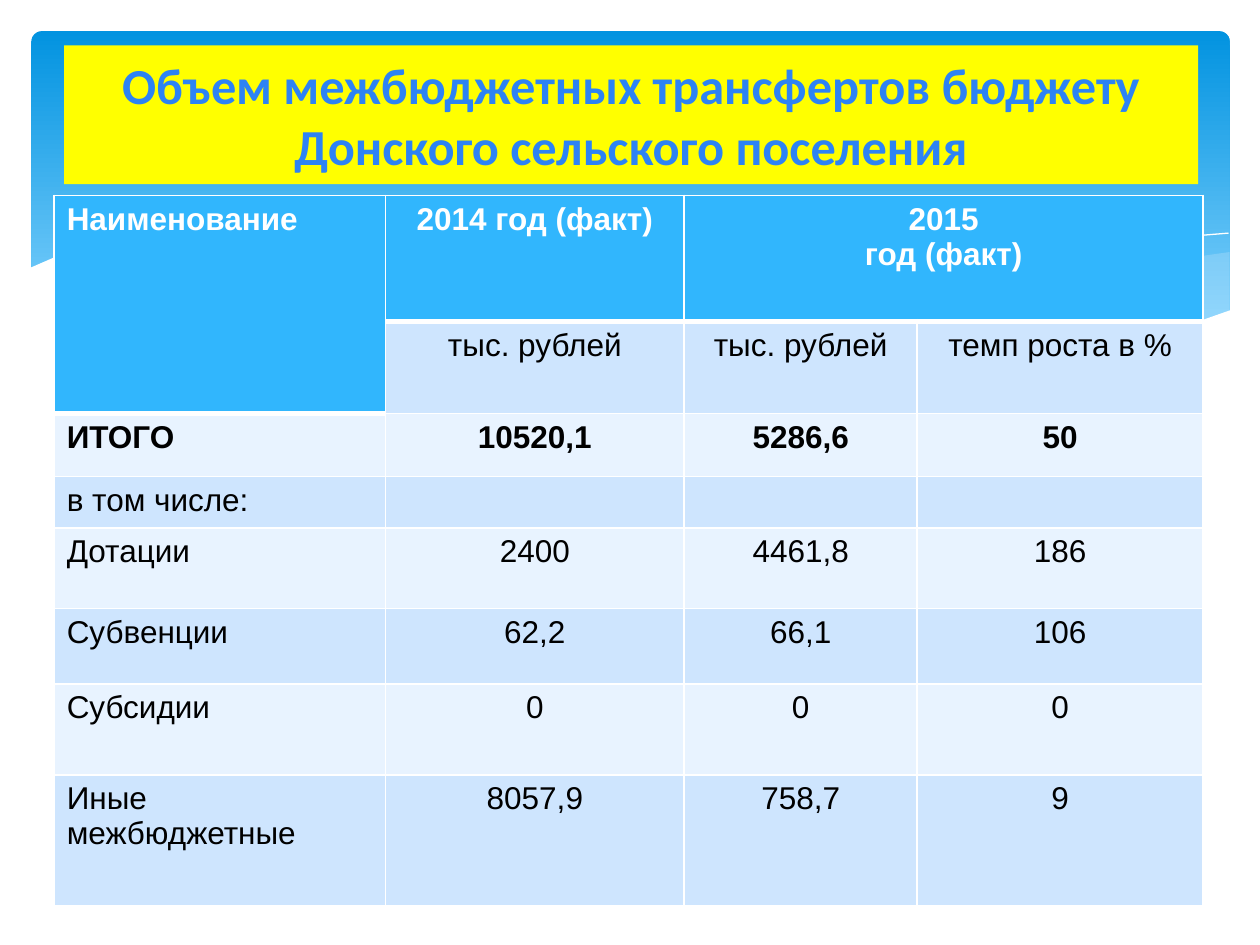
from dataclasses import dataclass
from typing import Optional

from lxml import etree
from pptx import Presentation
from pptx import util as u
from pptx.dml.color import RGBColor
from pptx.enum import shapes, text
from pptx.oxml import ns

WHITE = RGBColor(0xFF, 0xFF, 0xFF)
BLACK = RGBColor(0x00, 0x00, 0x00)
YELLOW = RGBColor(0xFF, 0xFF, 0x00)
TITLE_BLUE = RGBColor(0x2D, 0x83, 0xF4)
HEADER_BLUE = RGBColor(0x31, 0xB6, 0xFD)
BAND_DARK = RGBColor(0xCE, 0xE5, 0xFE)
BAND_LIGHT = RGBColor(0xE8, 0xF3, 0xFF)
SKY_TOP = RGBColor(0x02, 0x93, 0xE0)
SKY_BOTTOM = RGBColor(0x83, 0xD3, 0xFE)
WAVE_BLUE = RGBColor(0xC6, 0xE7, 0xFC)

WIDTH, HEIGHT = 10, 7.5
COLUMN_WIDTHS = (2.63, 2.37, 1.85, 2.27)
ROW_HEIGHTS = (1, 0.73, 0.5, 0.41, 0.64, 0.6, 0.72, 1.04)
ROWS = (
    ("Наименование", "2014 год (факт)", "2015\nгод (факт)", ""),
    ("", "тыс. рублей", "тыс. рублей", "темп роста в %"),
    ("ИТОГО", "10520,1", "5286,6", "50"),
    ("в том числе:", "", "", ""),
    ("Дотации", "2400", "4461,8", "186"),
    ("Субвенции", "62,2", "66,1", "106"),
    ("Субсидии", "0", "0", "0"),
    ("Иные межбюджетные", "8057,9", "758,7", "9"),
)
TOTAL_ROW = 2


@dataclass
class Wave:
    """A curve in inches: filled when it has a fill, else a thin white line."""
    points: tuple
    fill: Optional[RGBColor] = None
    opacity: int = 100


WAVES = (
    Wave(((9.76, 2), (9.48, 2.04), (9.06, 2.13), (8.61, 2.23), (8.05, 2.37),
          (7.53, 2.48), (7.06, 2.57), (6.61, 2.65), (7.05, 2.71), (7.57, 2.76),
          (8.14, 2.78), (8.63, 2.75), (9.05, 2.69), (9.42, 2.59), (9.76, 2.47)),
         WAVE_BLUE, 29),
    Wave(((8.93, 2.73), (8.37, 2.65), (7.75, 2.54), (7.06, 2.4), (6.29, 2.22),
          (5.84, 2.11), (5.41, 2.03), (4.89, 1.94), (4.42, 1.89), (3.99, 1.86),
          (3.61, 1.85), (3.28, 1.87), (2.86, 1.91), (3.42, 1.99), (4.04, 2.11),
          (4.49, 2.22), (5.3, 2.4), (6.01, 2.55), (6.65, 2.66), (7.22, 2.74),
          (7.73, 2.77), (8.28, 2.78), (8.67, 2.76)),
         WAVE_BLUE, 40),
    Wave(((3.09, 1.95), (3.44, 1.9), (3.87, 1.87), (4.33, 1.87), (4.89, 1.9),
          (5.56, 1.97), (6.36, 2.08), (7.27, 2.26), (8.31, 2.51), (9.07, 2.72))),
    Wave(((6.13, 2.57), (6.53, 2.46), (7.2, 2.29), (8.06, 2.1), (8.66, 1.99),
          (9.1, 1.92), (9.51, 1.87), (9.75, 1.85))),
    Wave(((9.77, 2.46), (9.4, 2.59), (8.99, 2.69), (8.5, 2.75), (8.09, 2.77),
          (7.61, 2.75), (7.08, 2.7), (6.48, 2.62), (5.79, 2.5), (5.03, 2.33),
          (4.47, 2.2), (3.91, 2.07), (3.4, 1.97), (2.92, 1.9), (2.5, 1.86),
          (2.11, 1.84), (1.77, 1.84), (1.32, 1.86), (0.95, 1.91), (0.67, 1.97),
          (0.46, 2.03), (0.23, 2.13), (0.23, 3.29), (9.77, 3.29)),
         WHITE),
)


def write_text(frame, content: str, *, size: float, color: RGBColor,
               font: str = "Arial", bold: bool = False, centered: bool = True) -> None:
    """Write one paragraph for each line of content."""
    for index, line in enumerate(content.split("\n")):
        paragraph = frame.add_paragraph() if index else frame.paragraphs[0]
        paragraph.alignment = text.PP_ALIGN.CENTER if centered else text.PP_ALIGN.LEFT
        run = paragraph.add_run()
        run.text = line
        run.font.name, run.font.size = font, u.Pt(size)
        run.font.bold = bold
        run.font.color.rgb = color


def add_panel(slide, kind, left: float, top: float, width: float, height: float):
    """Add an unlined shape placed by shares of the slide's size."""
    shape = slide.shapes.add_shape(
        kind, u.Inches(left * WIDTH), u.Inches(top * HEIGHT),
        u.Inches(width * WIDTH), u.Inches(height * HEIGHT))
    shape.shadow.inherit = False
    shape.line.fill.background()
    return shape


def add_wave(slide, wave: Wave) -> None:
    points = [(round(x * 100), round(y * 100)) for x, y in wave.points]
    builder = slide.shapes.build_freeform(*points[0], scale=u.Inches(0.01))
    builder.add_line_segments(points[1:], close=wave.fill is not None)
    shape = builder.convert_to_shape()
    shape.shadow.inherit = False
    if wave.fill is None:
        shape.fill.background()
        shape.line.color.rgb = WHITE
        shape.line.width = 0
        return
    shape.line.fill.background()
    shape.fill.solid()
    shape.fill.fore_color.rgb = wave.fill
    if wave.opacity < 100:
        color = shape.fill._xPr.find(".//" + ns.qn("a:srgbClr"))
        etree.SubElement(color, ns.qn("a:alpha"), val=str(wave.opacity * 1000))


def set_borders(cell, top: float, bottom: float) -> None:
    properties = cell._tc.get_or_add_tcPr()
    for side, points in (("L", 1), ("R", 1), ("T", top), ("B", bottom)):
        line = etree.SubElement(properties, ns.qn(f"a:ln{side}"), w=str(u.Pt(points)))
        fill = etree.SubElement(line, ns.qn("a:solidFill"))
        etree.SubElement(fill, ns.qn("a:srgbClr"), val=str(WHITE))


def add_transfers_table(slide) -> None:
    frame = slide.shapes.add_table(
        len(ROWS), len(COLUMN_WIDTHS), u.Inches(0.43), u.Inches(1.55),
        u.Inches(sum(COLUMN_WIDTHS)), u.Inches(sum(ROW_HEIGHTS)))
    table = frame.table
    table.first_row = table.horz_banding = False
    for column, width in zip(table.columns, COLUMN_WIDTHS):
        column.width = u.Inches(width)
    for row, height in zip(table.rows, ROW_HEIGHTS):
        row.height = u.Inches(height)
    table.cell(0, 0).merge(table.cell(1, 0))
    table.cell(0, 2).merge(table.cell(0, 3))

    for row, values in enumerate(ROWS):
        for column, value in enumerate(values):
            cell = table.cell(row, column)
            # The name heading reaches one row further down than the others
            header_end = 1 if column == 0 else 0
            is_header = row <= header_end
            set_borders(cell, top=3 if row == header_end + 1 else 1,
                        bottom=3 if row == header_end else 1)
            cell.fill.solid()
            band = BAND_DARK if row % 2 else BAND_LIGHT
            cell.fill.fore_color.rgb = HEADER_BLUE if is_header else band
            if not cell.is_spanned:
                write_text(cell.text_frame, value, size=18,
                           color=WHITE if is_header else BLACK,
                           bold=is_header or row == TOTAL_ROW, centered=column > 0)


def main() -> None:
    presentation = Presentation()
    presentation.slide_width, presentation.slide_height = u.Inches(WIDTH), u.Inches(HEIGHT)
    slide = presentation.slides.add_slide(presentation.slide_layouts[6])

    # Sky panel with waves along its lower edge
    sky = add_panel(slide, shapes.MSO_SHAPE.ROUNDED_RECTANGLE, 0.025, 0.033, 0.951, 0.36)
    sky.adjustments[0] = 0.03
    sky.fill.gradient()
    sky.fill.gradient_angle = 270
    for stop, color, position in zip(sky.fill.gradient_stops, (SKY_TOP, SKY_BOTTOM), (0, 0.9)):
        stop.color.rgb, stop.position = color, position
    for wave in WAVES:
        add_wave(slide, wave)

    # Title
    title = add_panel(slide, shapes.MSO_SHAPE.RECTANGLE, 0.051, 0.048, 0.9, 0.147)
    title.fill.solid()
    title.fill.fore_color.rgb = YELLOW
    title.text_frame.word_wrap = True
    title.text_frame.vertical_anchor = text.MSO_ANCHOR.MIDDLE
    write_text(title.text_frame,
               "Объем межбюджетных трансфертов бюджету Донского сельского поселения",
               size=28.8, color=TITLE_BLUE, font="Calibri", bold=True)

    add_transfers_table(slide)
    presentation.save("out.pptx")


if __name__ == "__main__":
    main()
